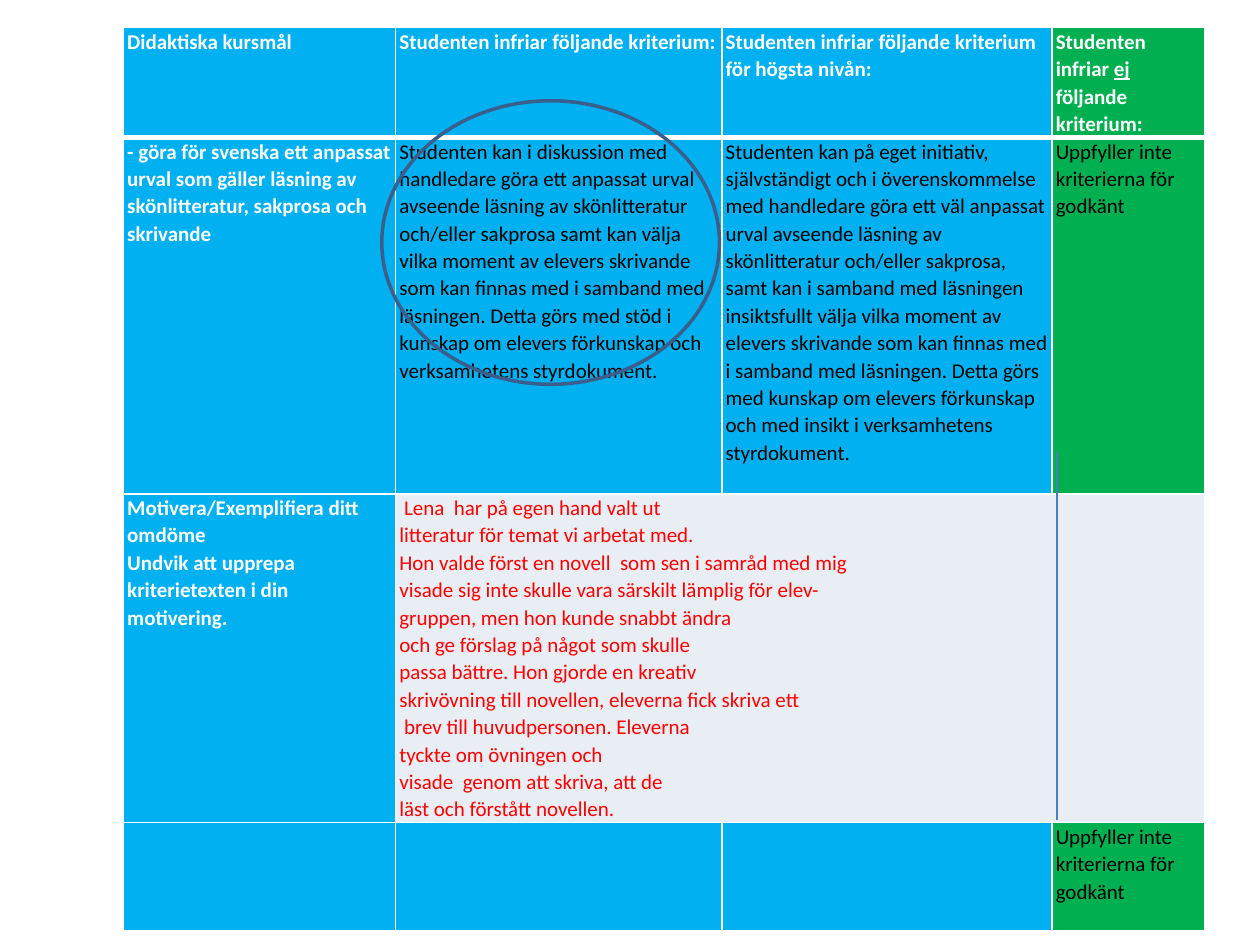
from lxml.etree import SubElement
from pptx import Presentation
from pptx.dml.color import RGBColor
from pptx.enum.shapes import MSO_CONNECTOR, MSO_SHAPE
from pptx.oxml.ns import qn
from pptx.util import Inches, Pt

COLORS = {
    "blue": "00B0F0", "green": "00B050", "pale": "E9EDF4", "white": "FFFFFF",
    "black": "000000", "red": "FF0000", "ring": "3A5F8C", "divider": "4B7EBC",
}
COLUMN_WIDTHS = [2.16, 2.59, 2.62, 1.21]
ROW_HEIGHTS = [0.87, 2.83, 2.61, 0.86]
MARGINS = {"margin_left": 0.03, "margin_right": 0.03, "margin_top": 0, "margin_bottom": 0}
FAILED = "Uppfyller inte kriterierna för godkänt"

# One string per cell, one line per paragraph; *...* is underlined.
CRITERIA = [
    [
        "Didaktiska kursmål",
        "Studenten infriar följande kriterium:",
        "Studenten infriar följande kriterium för högsta nivån:",
        "Studenten infriar *ej* följande kriterium:",
    ],
    [
        "- göra för svenska ett anpassat urval som gäller läsning av skönlitteratur, "
        "sakprosa och skrivande",
        "Studenten kan i diskussion med handledare göra ett anpassat urval avseende "
        "läsning av skönlitteratur och/eller sakprosa samt kan välja vilka moment av "
        "elevers skrivande som kan finnas med i samband med läsningen. Detta görs med "
        "stöd i kunskap om elevers förkunskap och verksamhetens styrdokument.",
        "Studenten kan på eget initiativ, självständigt och i överenskommelse med "
        "handledare göra ett väl anpassat urval avseende läsning av skönlitteratur "
        "och/eller sakprosa, samt kan i samband med läsningen insiktsfullt välja vilka "
        "moment av elevers skrivande som kan finnas med i samband med läsningen. Detta "
        "görs med kunskap om elevers förkunskap och med insikt i verksamhetens "
        "styrdokument.",
        FAILED,
    ],
    [
        "Motivera/Exemplifiera ditt omdöme\n"
        "Undvik att upprepa kriterietexten i din motivering.",
        " Lena  har på egen hand valt ut\n"
        "litteratur för temat vi arbetat med.\n"
        "Hon valde först en novell  som sen i samråd med mig\n"
        "visade sig inte skulle vara särskilt lämplig för elev-\n"
        "gruppen, men hon kunde snabbt ändra\n"
        "och ge förslag på något som skulle\n"
        "passa bättre. Hon gjorde en kreativ\n"
        "skrivövning till novellen, eleverna fick skriva ett\n"
        " brev till huvudpersonen. Eleverna\n"
        "tyckte om övningen och\n"
        "visade  genom att skriva, att de\n"
        "läst och förstått novellen.",
        "", "",
    ],
    ["", "", "", FAILED],
]
MOTIVATION_ROW = 2


def rgb(name):
    return RGBColor.from_string(COLORS[name])


def add_borders(cell, widths):
    """Draw white cell edges; widths maps each edge tag to points."""
    properties = cell._tc.get_or_add_tcPr()
    for edge, width in widths.items():
        line = SubElement(properties, qn(f"a:{edge}"), w=str(Pt(width)))
        fill = SubElement(line, qn("a:solidFill"))
        SubElement(fill, qn("a:srgbClr"), val=COLORS["white"])


presentation = Presentation()
presentation.slide_width = Inches(10)
presentation.slide_height = Inches(7.5)
slide = presentation.slides.add_slide(presentation.slide_layouts[6])

assessment = slide.shapes.add_table(
    len(ROW_HEIGHTS), len(COLUMN_WIDTHS), Inches(0.98), Inches(0.22),
    Inches(sum(COLUMN_WIDTHS)), Inches(sum(ROW_HEIGHTS)),
).table
assessment.first_row = False
assessment.horz_banding = False
for column, width in zip(assessment.columns, COLUMN_WIDTHS):
    column.width = Inches(width)
for row, height in zip(assessment.rows, ROW_HEIGHTS):
    row.height = Inches(height)

for r, row_texts in enumerate(CRITERIA):
    for c, text in enumerate(row_texts):
        cell = assessment.cell(r, c)
        is_heading = r == 0 or c == 0
        is_motivation = r == MOTIVATION_ROW and c > 0
        add_borders(cell, {
            "lnL": 1, "lnR": 1,
            "lnT": 3 if r == 1 else 1, "lnB": 3 if r == 0 else 1,
        })
        cell.fill.solid()
        background = "pale" if is_motivation else "green" if c == 3 else "blue"
        cell.fill.fore_color.rgb = rgb(background)
        for side, margin in MARGINS.items():
            setattr(cell, side, Inches(margin))
        if not text:
            continue

        text_color = "white" if is_heading else "red" if is_motivation else "black"
        font_format = {"name": "Calibri", "size": Pt(12), "bold": is_heading}
        for i, line_text in enumerate(text.split("\n")):
            frame = cell.text_frame
            paragraph = frame.add_paragraph() if i else frame.paragraphs[0]
            paragraph.line_spacing = 1.07
            for j, part in enumerate(line_text.split("*")):
                run = paragraph.add_run()
                run.text = part
                for attribute, value in font_format.items():
                    setattr(run.font, attribute, value)
                run.font.underline = j % 2 == 1
                run.font.color.rgb = rgb(text_color)

assessment.cell(MOTIVATION_ROW, 1).merge(assessment.cell(MOTIVATION_ROW, 3))

chosen_level = slide.shapes.add_shape(
    MSO_SHAPE.OVAL, Inches(3.03), Inches(0.8), Inches(2.68), Inches(2.25))
chosen_level.shadow.inherit = False
chosen_level.fill.background()
chosen_level.line.color.rgb = rgb("ring")
chosen_level.line.width = Pt(2)

divider = slide.shapes.add_connector(
    MSO_CONNECTOR.STRAIGHT, Inches(8.39), Inches(3.59), Inches(8.39), Inches(6.51))
divider.line.color.rgb = rgb("divider")
divider.line.width = Pt(0.75)
SubElement(divider._element.spPr, qn("a:effectLst"))

presentation.save("out.pptx")
